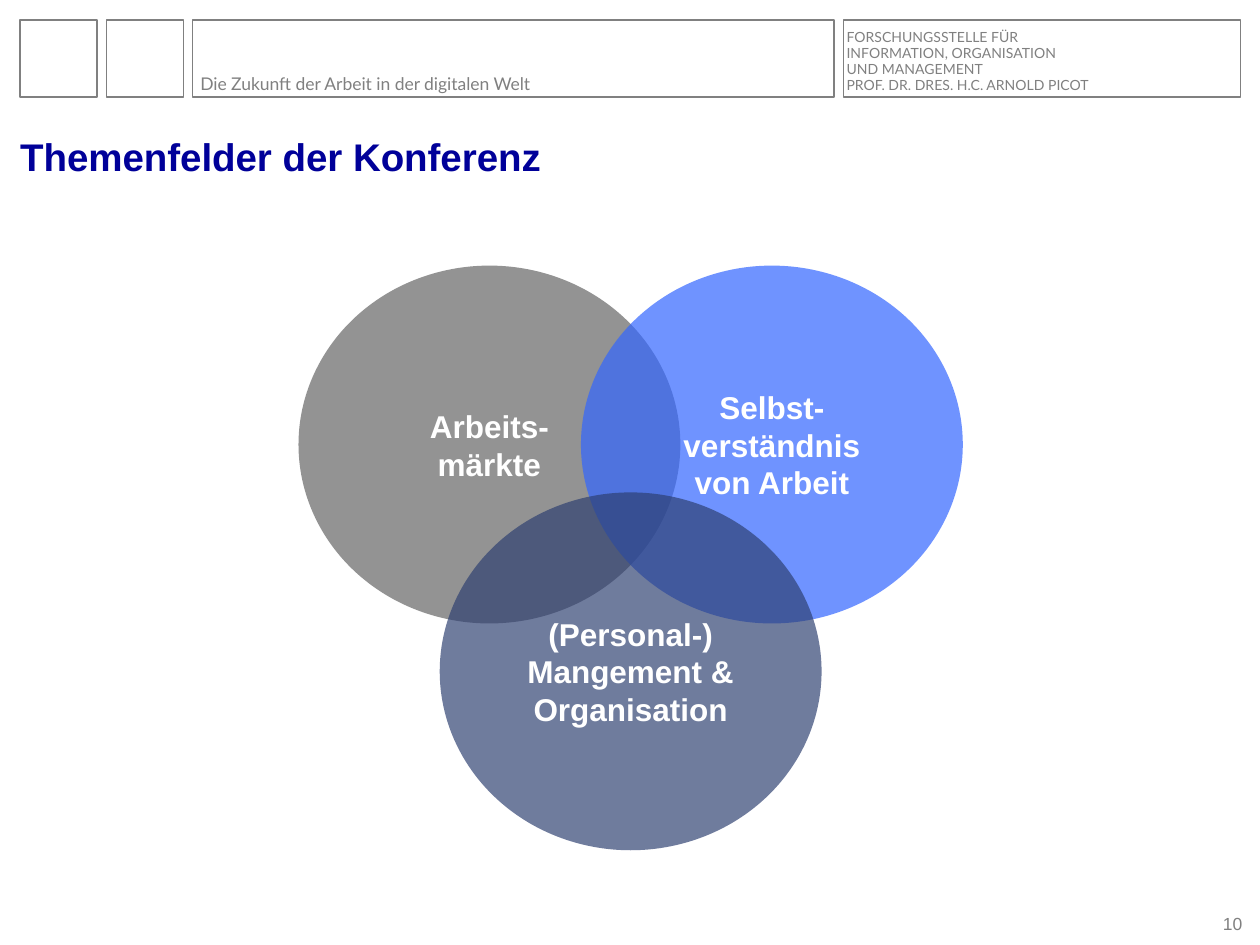
"""Build the slide on the conference topics as three overlapping circles."""
from lxml import etree
from pptx import Presentation
from pptx import util as u
from pptx.dml.color import RGBColor
from pptx.enum import shapes, text
from pptx.oxml.ns import qn

THEME = {
    "grey": "808080", "title": "000099", "white": "FFFFFF",
    "header_font": "Lato", "font": "Arial",
    "title_size": 22, "topic_size": 18, "small_size": 10, "tiny_size": 8,
}
TITLE = "Themenfelder der Konferenz"
CONFERENCE = [["Die Zukunft der Arbeit in der digitalen Welt"]]
INSTITUTE = [
    ["FORSCHUNGSSTELLE FÜR", "INFORMATION, ORGANISATION", "UND MANAGEMENT"],
    ["PROF. DR. DRES. H.C. ARNOLD PICOT"],
]
PAGE_NUMBER = [["10"]]
TOPICS = [
    ([["Arbeits-", "märkte"]], "606060", 68, (-1, 0)),
    ([["Selbst-verständnis"], ["von Arbeit"]], "3366FF", 70, (1, 0)),
    ([["(Personal-) Mangement & Organisation"]], "2C3E70", 68, (0, 1)),
]

HEADER_LEFT, HEADER_TOP, HEADER_HEIGHT = 11.5, 11.5, 44
HEADER_WIDTHS = [44, 44, 366.5, 227]
HEADER_GAP = 5.3
CIRCLE_SIZE = (218.2, 204.5)
CIRCLE_CENTRE, CIRCLES_TOP = 360.4, 151.8
CIRCLE_STEP = (80.7, 129.6)


def points(*lengths):
    return [u.Pt(length) for length in lengths]


def write(shape, paragraphs, size, colour, font=THEME["font"], bold=False,
          align=text.PP_ALIGN.LEFT, anchor=text.MSO_ANCHOR.BOTTOM,
          inset=0, spacing=1.0, wrap=True):
    frame = shape.text_frame
    frame.auto_size = text.MSO_AUTO_SIZE.NONE
    frame.word_wrap = wrap
    frame.vertical_anchor = anchor
    frame.margin_left = frame.margin_right = u.Pt(inset)
    frame.margin_top = frame.margin_bottom = u.Pt(inset)
    for index, lines in enumerate(paragraphs):
        paragraph = frame.add_paragraph() if index else frame.paragraphs[0]
        paragraph.alignment = align
        paragraph.line_spacing = spacing
        for number, line in enumerate(lines):
            if number:
                paragraph.add_line_break()
            run = paragraph.add_run()
            run.text = line
            run.font.name = font
            run.font.size = u.Pt(size)
            run.font.bold = bold
            run.font.color.rgb = RGBColor.from_string(colour)


def add_header(slide):
    left = HEADER_LEFT
    for width in HEADER_WIDTHS:
        frame = slide.shapes.add_shape(
            shapes.MSO_SHAPE.RECTANGLE, *points(left, HEADER_TOP, width, HEADER_HEIGHT))
        frame.shadow.inherit = False
        frame.fill.background()
        frame.line.color.rgb = RGBColor.from_string(THEME["grey"])
        frame.line.width = u.Pt(0.75)
        left += width + HEADER_GAP
    for paragraphs, box, size in [
        (CONFERENCE, (114.5, 24.5, 386.6, 29.5), THEME["small_size"]),
        (INSTITUTE, (483.8, 20.2, 187.2, 33.1), THEME["tiny_size"]),
    ]:
        label = slide.shapes.add_textbox(*points(*box))
        write(label, paragraphs, size, THEME["grey"], THEME["header_font"], spacing=0.95)


def add_topic(slide, paragraphs, colour, opacity, position):
    width, height = CIRCLE_SIZE
    column, row = position
    left = CIRCLE_CENTRE + column * CIRCLE_STEP[0] - width / 2
    top = CIRCLES_TOP + row * CIRCLE_STEP[1]
    circle = slide.shapes.add_shape(
        shapes.MSO_SHAPE.OVAL, *points(left, top, width, height))
    circle.shadow.inherit = False
    circle.line.fill.background()
    circle.fill.solid()
    circle.fill.fore_color.rgb = RGBColor.from_string(colour)
    fill_colour = circle.fill._xPr.find(qn("a:solidFill"))[0]
    etree.SubElement(fill_colour, qn("a:alpha"), val=str(opacity * 1000))
    write(circle, paragraphs, THEME["topic_size"], THEME["white"], bold=True,
          align=text.PP_ALIGN.CENTER, anchor=text.MSO_ANCHOR.MIDDLE, inset=2.9)


def main():
    presentation = Presentation()
    presentation.slide_width, presentation.slide_height = points(720, 540)
    slide = presentation.slides.add_slide(presentation.slide_layouts[5])
    add_header(slide)
    title = slide.shapes.title
    title.left, title.top, title.width, title.height = points(11.5, 60.5, 697, 41.8)
    write(title, [[TITLE]], THEME["title_size"], THEME["title"], bold=True)
    for topic in TOPICS:
        add_topic(slide, *topic)
    page = slide.shapes.add_textbox(*points(689.8, 521.3, 20.1, 12.2))
    write(page, PAGE_NUMBER, THEME["small_size"], THEME["grey"],
          align=text.PP_ALIGN.RIGHT, wrap=False)
    presentation.save("out.pptx")


if __name__ == "__main__":
    main()
